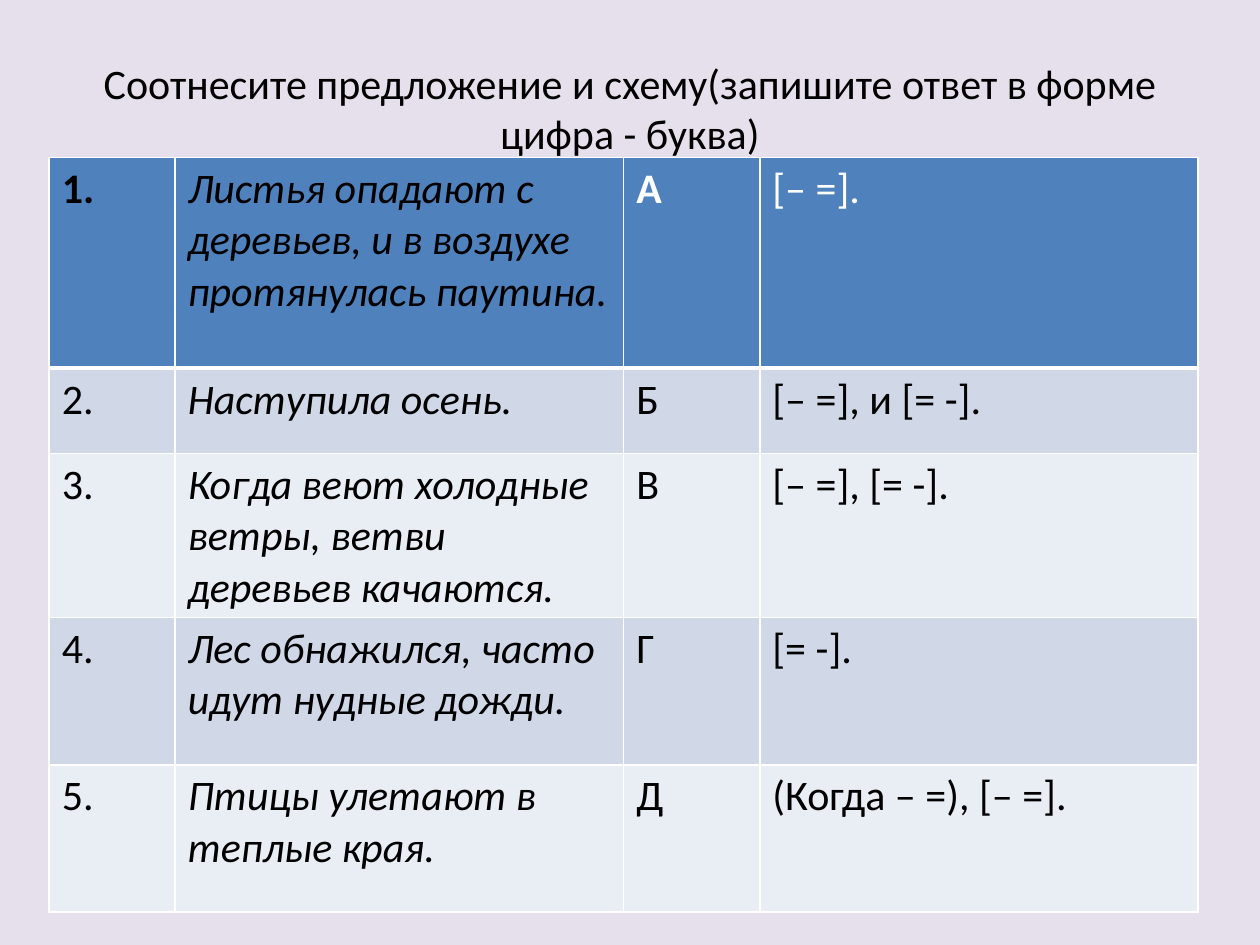
from dataclasses import dataclass

import pptx
import pptx.dml.color
import pptx.enum.text
import pptx.oxml
import pptx.oxml.ns
import pptx.util
from pptx.util import Inches

COLORS = {
    "background": "E6E0EC",
    "text": "000000",
    "light": "FFFFFF",
    "header": "4F81BD",
    "band_dark": "D0D8E8",
    "band_light": "E9EDF4",
}
FONT = "Calibri"
FONT_SIZE = 24
TITLE = "Соотнесите предложение и схему(запишите ответ в форме цифра - буква)"
COLUMN_WIDTHS = (1, 3.56, 1.08, 3.48)


@dataclass
class MatchRow:
    number: str
    sentence: str
    letter: str
    scheme: str
    height: float = 1.17


ROWS = [
    MatchRow("1.", "Листья опадают с деревьев, и в воздухе протянулась паутина.",
             "А", "[– =].", 1.67),
    MatchRow("2.", "Наступила осень.", "Б", "[– =], и [= -].", 0.68),
    MatchRow("3.", "Когда веют холодные ветры, ветви деревьев качаются.",
             "В", "[– =], [= -]."),
    MatchRow("4.", "Лес обнажился, часто идут нудные дожди.", "Г", "[= -]."),
    MatchRow("5.", "Птицы улетают в теплые края.", "Д", "(Когда – =), [– =]."),
]


def rgb(name: str) -> pptx.dml.color.RGBColor:
    return pptx.dml.color.RGBColor.from_string(COLORS[name])


def format_text(para, color: str, bold: bool = False, italic: bool = False) -> None:
    for span in para.runs:
        span.font.name = FONT
        span.font.size = pptx.util.Pt(FONT_SIZE)
        span.font.color.rgb = rgb(color)
        span.font.bold = bold
        span.font.italic = italic


def add_borders(cell, top: float, bottom: float) -> None:
    """Draw the cell borders; call before the fill, which must follow them in the XML."""
    properties = cell._tc.get_or_add_tcPr()
    namespace = pptx.oxml.ns.nsdecls("a")
    for side, points in (("L", 1), ("R", 1), ("T", top), ("B", bottom)):
        properties.append(pptx.oxml.parse_xml(
            f'<a:ln{side} {namespace} w="{pptx.util.Pt(points)}"><a:solidFill>'
            f'<a:srgbClr val="{COLORS["light"]}"/></a:solidFill></a:ln{side}>'
        ))


def add_title(slide) -> None:
    box = slide.shapes.add_textbox(Inches(0.5), Inches(0.3), Inches(9), Inches(1.11))
    frame = box.text_frame
    frame.word_wrap = True
    frame.vertical_anchor = pptx.enum.text.MSO_ANCHOR.MIDDLE
    frame.text = TITLE
    para = frame.paragraphs[0]
    para.alignment = pptx.enum.text.PP_ALIGN.CENTER
    format_text(para, "text")


def fill_row(table, index: int, row: MatchRow) -> None:
    table.rows[index].height = Inches(row.height)
    header = index == 0
    band = "header" if header else ("band_dark" if index % 2 else "band_light")
    texts = (row.number, row.sentence, row.letter, row.scheme)
    for column, text in enumerate(texts):
        cell = table.cell(index, column)
        add_borders(cell, top=3 if index == 1 else 1, bottom=3 if header else 1)
        cell.fill.solid()
        cell.fill.fore_color.rgb = rgb(band)
        cell.text_frame.text = text
        format_text(
            cell.text_frame.paragraphs[0],
            color="light" if header and column >= 2 else "text",
            bold=header and column in (0, 2),
            italic=column == 1,
        )


def add_match_table(slide) -> None:
    table = slide.shapes.add_table(
        len(ROWS), len(COLUMN_WIDTHS), Inches(0.39), Inches(1.25),
        Inches(sum(COLUMN_WIDTHS)), Inches(sum(row.height for row in ROWS)),
    ).table
    for column, width in zip(table.columns, COLUMN_WIDTHS):
        column.width = Inches(width)
    for index, row in enumerate(ROWS):
        fill_row(table, index, row)


def main() -> None:
    deck = pptx.Presentation()
    deck.slide_width, deck.slide_height = Inches(10), Inches(7.5)
    slide = deck.slides.add_slide(deck.slide_layouts[6])
    slide.background.fill.solid()
    slide.background.fill.fore_color.rgb = rgb("background")
    add_title(slide)
    add_match_table(slide)
    deck.save("out.pptx")


if __name__ == "__main__":
    main()
